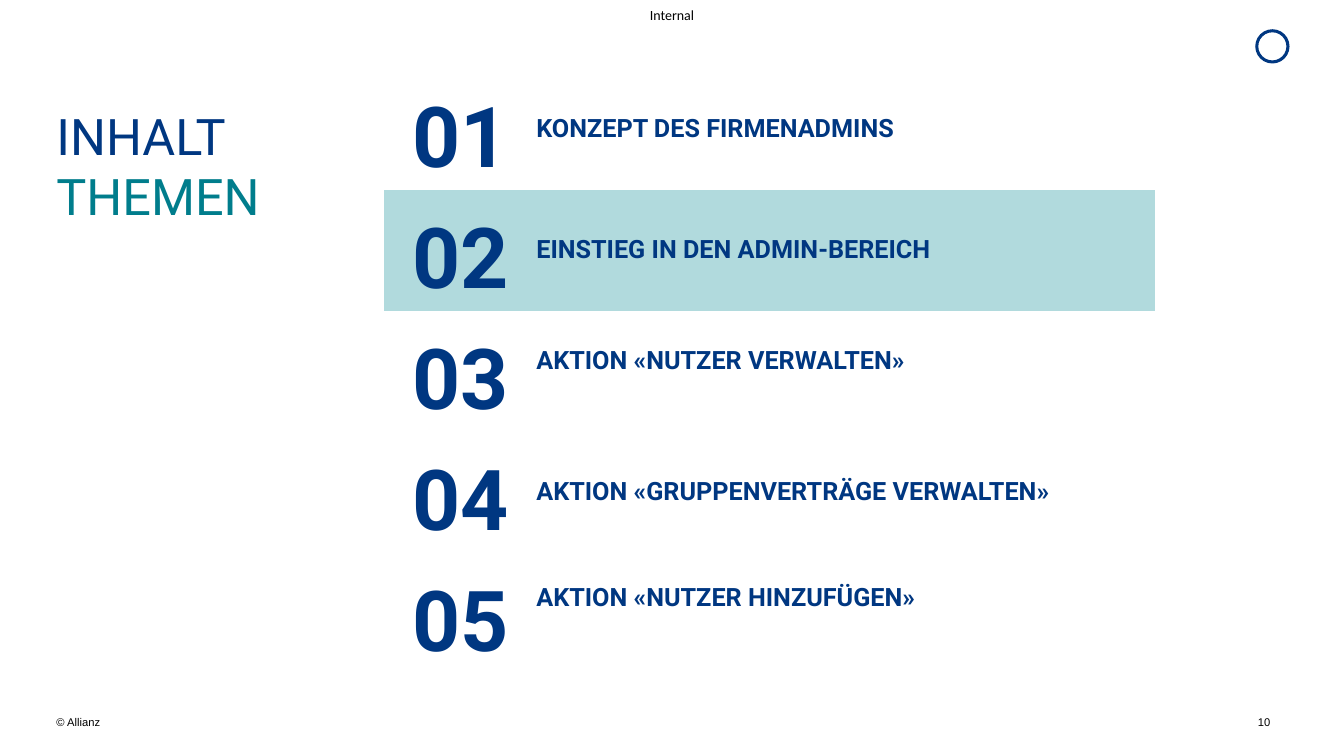
from dataclasses import dataclass

from pptx import Presentation, util as u
from pptx.dml.color import RGBColor
from pptx.enum import shapes, text
from pptx.oxml.ns import qn

WIDTH, HEIGHT = 13.33, 7.5
PLAIN_TABLE = "{2D5ABB26-0587-4C30-8999-92F81FD0307C}"


@dataclass(frozen=True)
class Theme:
    navy: str = "003781"
    teal: str = "007D8C"
    highlight: str = "B1DADD"
    black: str = "000000"
    heading: str = "Roboto"
    footer: str = "Arial"
    label: str = "Calibri"
    number_size: int = 60
    title_size: int = 36
    topic_size: int = 18
    label_size: int = 10
    footer_size: int = 8


THEME = Theme()
COLUMNS = (1.51, 6.14, 1.18, 0.14)
# Topic and the extra space below it, which lifts the text within its row
TOPICS = (
    ("KONZEPT DES FIRMENADMINS", 0),
    ("EINSTIEG IN DEN ADMIN-BEREICH", 0),
    ("AKTION «NUTZER VERWALTEN»", 0.2),
    ("AKTION «GRUPPENVERTRÄGE VERWALTEN»", 0),
    ("AKTION «NUTZER HINZUFÜGEN»", 0.3),
)
CURRENT = 1


def inches(*lengths):
    return [u.Inches(length) for length in lengths]


def style(r, font, size, color, bold=False):
    r.font.name, r.font.size, r.font.bold = font, u.Pt(size), bold
    r.font.color.rgb = RGBColor.from_string(color)


def set_margins(target, left, top, right, bottom):
    (target.margin_left, target.margin_top,
     target.margin_right, target.margin_bottom) = inches(left, top, right, bottom)


def add_label(s, box, content, font, size, align, anchor=text.MSO_ANCHOR.TOP):
    tf = s.shapes.add_textbox(*inches(*box)).text_frame
    tf.word_wrap = True
    tf.vertical_anchor = anchor
    set_margins(tf, 0, 0, 0, 0)
    p = tf.paragraphs[0]
    p.text, p.alignment = content, align
    style(p.runs[0], font, size, THEME.black)


def place_title(s, box):
    sp = s.shapes.title
    sp.left, sp.top, sp.width, sp.height = inches(*box)
    tf = sp.text_frame
    tf.word_wrap = True
    tf.auto_size = text.MSO_AUTO_SIZE.NONE
    tf.vertical_anchor = text.MSO_ANCHOR.TOP
    set_margins(tf, 0, 0.2, 0, 0)
    p = tf.paragraphs[0]
    p.alignment = text.PP_ALIGN.LEFT
    for word, color in (("INHALT ", THEME.navy), ("THEMEN", THEME.teal)):
        r = p.add_run()
        r.text = word
        style(r, THEME.heading, THEME.title_size, color)


def fill_cell(cell, content, size, margins, align):
    cell.vertical_anchor = text.MSO_ANCHOR.MIDDLE
    set_margins(cell, *margins)
    p = cell.text_frame.paragraphs[0]
    p.text, p.alignment = content, align
    style(p.runs[0], THEME.heading, size, THEME.navy, bold=True)


def add_agenda(s, left, top, height):
    frame = s.shapes.add_table(len(TOPICS), len(COLUMNS),
                               *inches(left, top, sum(COLUMNS), height))
    table = frame.table
    table.first_row = table.horz_banding = False
    frame._element.find(".//" + qn("a:tableStyleId")).text = PLAIN_TABLE
    for column, width in zip(table.columns, COLUMNS):
        column.width = u.Inches(width)
    for i, (topic, lift) in enumerate(TOPICS):
        table.rows[i].height = u.Inches(height / len(TOPICS))
        number, name = table.cell(i, 0), table.cell(i, 1)
        fill_cell(number, f"{i + 1:02}", THEME.number_size,
                  (0, 0.2, 0, 0), text.PP_ALIGN.CENTER)
        fill_cell(name, topic, THEME.topic_size,
                  (0, 0.05, 0.1, 0.05 + lift), text.PP_ALIGN.LEFT)
        for j in range(len(COLUMNS)):
            fill = table.cell(i, j).fill
            if i == CURRENT and j < 2:
                fill.solid()
                fill.fore_color.rgb = RGBColor.from_string(THEME.highlight)
            else:
                fill.background()


def add_emblem(s, box):
    sp = s.shapes.add_shape(shapes.MSO_SHAPE.DONUT, *inches(*box))
    sp.adjustments[0] = 0.09
    sp.shadow.inherit = False
    sp.fill.solid()
    sp.fill.fore_color.rgb = RGBColor.from_string(THEME.navy)
    sp.line.fill.background()


def add_page_marks(s):
    """Classification, emblem, copyright line and page number."""
    align = text.PP_ALIGN
    footer_top = HEIGHT - 0.4
    add_label(s, (0.56, footer_top, 0.51, 0.13), "© Allianz",
              THEME.footer, THEME.footer_size, align.LEFT)
    add_label(s, (WIDTH / 2 - 0.37, 0, 0.74, 0.29), "Internal",
              THEME.label, THEME.label_size, align.CENTER, text.MSO_ANCHOR.MIDDLE)
    add_label(s, (WIDTH - 1.31, footer_top, 0.58, 0.4), "10",
              THEME.footer, THEME.footer_size, align.RIGHT)
    add_emblem(s, (WIDTH - 0.88, 0.29, 0.34, 0.34))


def main():
    prs = Presentation()
    prs.slide_width, prs.slide_height = inches(WIDTH, HEIGHT)
    s = prs.slides.add_slide(prs.slide_layouts[5])
    add_page_marks(s)
    add_agenda(s, left=3.81, top=0.68, height=5.98)
    place_title(s, (0.56, 0.84, 3.34, 4.8))
    prs.save("out.pptx")


if __name__ == "__main__":
    main()
